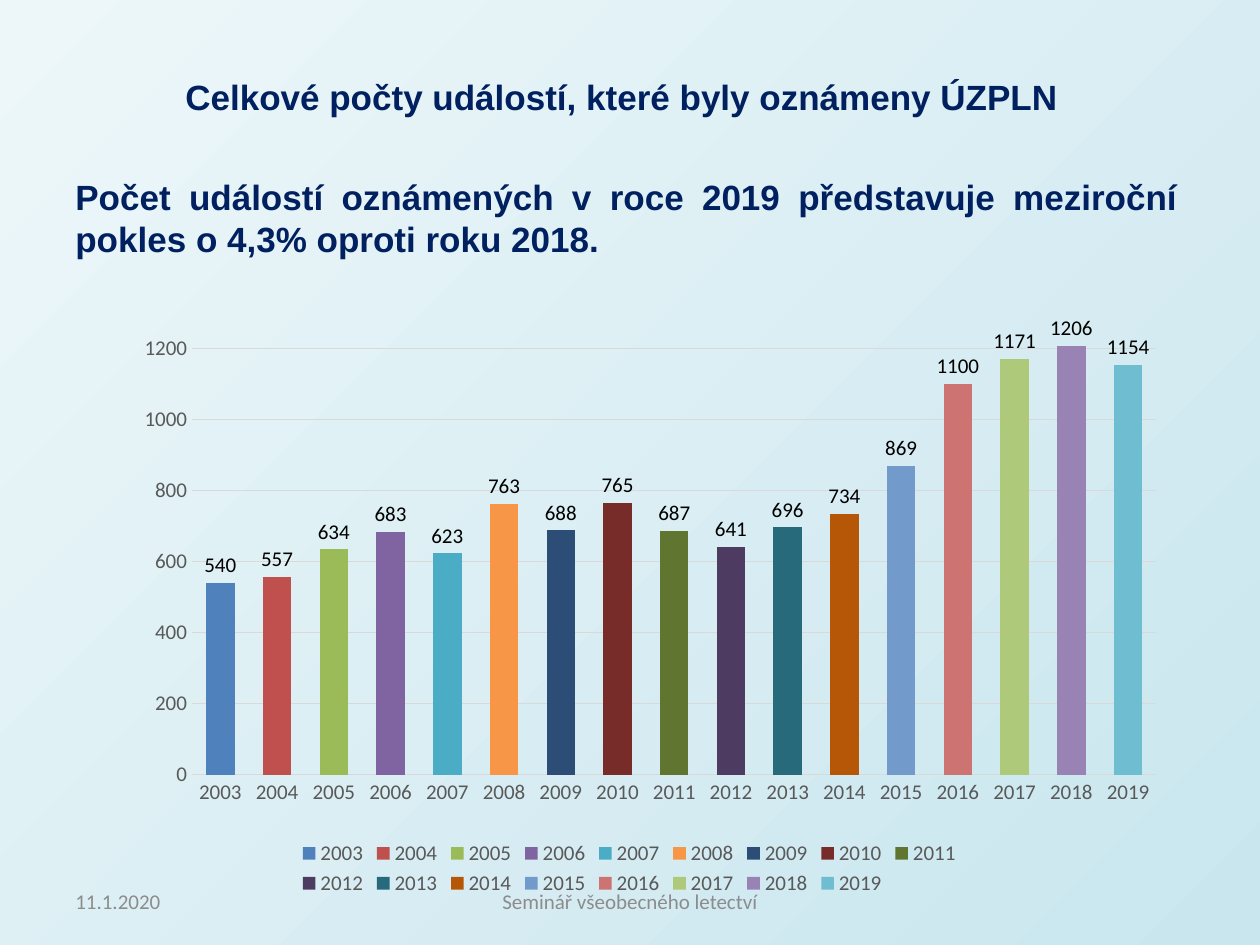
from lxml.etree import SubElement
from pptx import Presentation
from pptx.chart.data import CategoryChartData
from pptx.dml.color import RGBColor
from pptx.enum.chart import XL_CHART_TYPE as ChartType, XL_LABEL_POSITION as LabelPos
from pptx.enum.chart import XL_LEGEND_POSITION as LegendPos, XL_TICK_MARK as Tick
from pptx.enum.text import MSO_ANCHOR as Anchor, PP_ALIGN as Align
from pptx.oxml.ns import qn
from pptx.util import Cm, Pt

COLORS = {"navy": "002060", "footer": "8C8C8C", "axis": "595959", "grid": "D9D9D9",
          "label": "000000", "bg_start": "EDF7F9", "bg_end": "C9E6EE"}
EVENTS = [
    (540, "4F81BD"), (557, "C0504D"), (634, "9BBB59"), (683, "8064A2"),
    (623, "4BACC6"), (763, "F79646"), (688, "2C4D75"), (765, "772C2A"),
    (687, "5F7530"), (641, "4D3B62"), (696, "276A7C"), (734, "B65708"),
    (869, "729ACA"), (1100, "CD7371"), (1171, "AFC97A"), (1206, "9983B5"),
    (1154, "6FBDD1"),
]
FIRST_YEAR = 2003
HEADING = {"name": "Arial", "size": Pt(20), "bold": True}
SMALL = {"name": "Calibri", "size": Pt(12)}
PLOT = {"x": 0.097, "y": 0.076, "w": 0.889, "h": 0.726}


def rgb(key):
    return RGBColor.from_string(COLORS[key])


def apply(obj, values):
    for name, value in values.items():
        setattr(obj, name, value)


def style_font(font, values, color):
    apply(font, values)
    font.color.rgb = rgb(color)


def set_background(s):
    fill = s.background.fill
    fill.gradient()
    fill.gradient_angle = 315
    for stop, key in zip(fill.gradient_stops, ("bg_start", "bg_end")):
        stop.color.rgb = rgb(key)


def add_text(s, box, paragraphs, font, color, anchor=Anchor.TOP):
    tf = s.shapes.add_textbox(*map(Cm, box)).text_frame
    apply(tf, {"word_wrap": True, "vertical_anchor": anchor})
    for i, (text, fmt) in enumerate(paragraphs):
        p = tf.add_paragraph() if i else tf.paragraphs[0]
        apply(p, fmt)
        r = p.add_run()
        r.text = text
        style_font(r.font, font, color)


def add_body(s, box):
    add_text(s, box, [
        ("Celkové počty událostí, které byly oznámeny ÚZPLN ", {"alignment": Align.CENTER}),
        ("Počet událostí oznámených v roce 2019 představuje meziroční "
         "pokles o 4,3% oproti roku 2018.",
         {"alignment": Align.JUSTIFY, "space_before": Pt(33)}),
    ], HEADING, "navy")


def add_footer(s, box):
    left, top, width, height = box
    add_text(s, (left, top, 5.92, height), [("11.1.2020", {})],
             SMALL, "footer", Anchor.MIDDLE)
    center_width = 8.05
    add_text(s, (left + (width - center_width) / 2, top, center_width, height),
             [("Seminář všeobecného letectví", {"alignment": Align.CENTER})],
             SMALL, "footer", Anchor.MIDDLE)


def set_plot_layout(chart):
    area = chart._chartSpace.chart.plotArea
    layout = area.find(qn("c:layout"))
    if layout is None:
        layout = SubElement(area, qn("c:layout"))
        area.insert(0, layout)
    manual = SubElement(layout, qn("c:manualLayout"))
    settings = {"layoutTarget": "inner", "xMode": "edge", "yMode": "edge", **PLOT}
    for tag, value in settings.items():
        SubElement(manual, qn(f"c:{tag}")).set("val", str(value))


def style_axes(chart):
    cat, val = chart.category_axis, chart.value_axis
    for axis in (cat, val):
        apply(axis, {"major_tick_mark": Tick.NONE, "minor_tick_mark": Tick.NONE})
        style_font(axis.tick_labels.font, SMALL, "axis")
    apply(val, {"minimum_scale": 0, "maximum_scale": 1300, "major_unit": 200,
                "has_major_gridlines": True})
    val.format.line.fill.background()
    for line in (cat.format.line, val.major_gridlines.format.line):
        line.width = Pt(0.75)
        line.color.rgb = rgb("grid")


def add_events_chart(s, box):
    data = CategoryChartData()
    data.categories = [str(FIRST_YEAR + i) for i in range(len(EVENTS))]
    data.add_series("Series 1", [count for count, _ in EVENTS])
    chart = s.shapes.add_chart(ChartType.COLUMN_CLUSTERED, *map(Cm, box), data).chart
    apply(chart, {"has_title": False, "has_legend": True})
    style_font(chart.font, {"name": "Calibri", "size": Pt(10)}, "label")
    apply(chart.legend, {"position": LegendPos.BOTTOM, "include_in_layout": False})
    style_font(chart.legend.font, SMALL, "axis")
    style_axes(chart)
    set_plot_layout(chart)

    plot = chart.plots[0]
    apply(plot, {"gap_width": 99, "overlap": -13, "vary_by_categories": True,
                 "has_data_labels": True})
    apply(plot.data_labels, {"show_value": True, "position": LabelPos.OUTSIDE_END})
    style_font(plot.data_labels.font, SMALL, "label")
    for i, (_, color) in enumerate(EVENTS):
        fill = plot.series[0].points[i].format.fill
        fill.solid()
        fill.fore_color.rgb = RGBColor.from_string(color)


def main():
    prs = Presentation()
    prs.slide_width, prs.slide_height = Cm(25.4), Cm(19.05)
    s = prs.slides.add_slide(prs.slide_layouts[6])
    set_background(s)
    add_body(s, (1.27, 1.4, 22.73, 15.24))
    add_events_chart(s, (1.75, 5.33, 21.87, 12.83))
    add_footer(s, (1.27, 17.65, 22.86, 1.02))
    prs.save("out.pptx")


if __name__ == "__main__":
    main()
